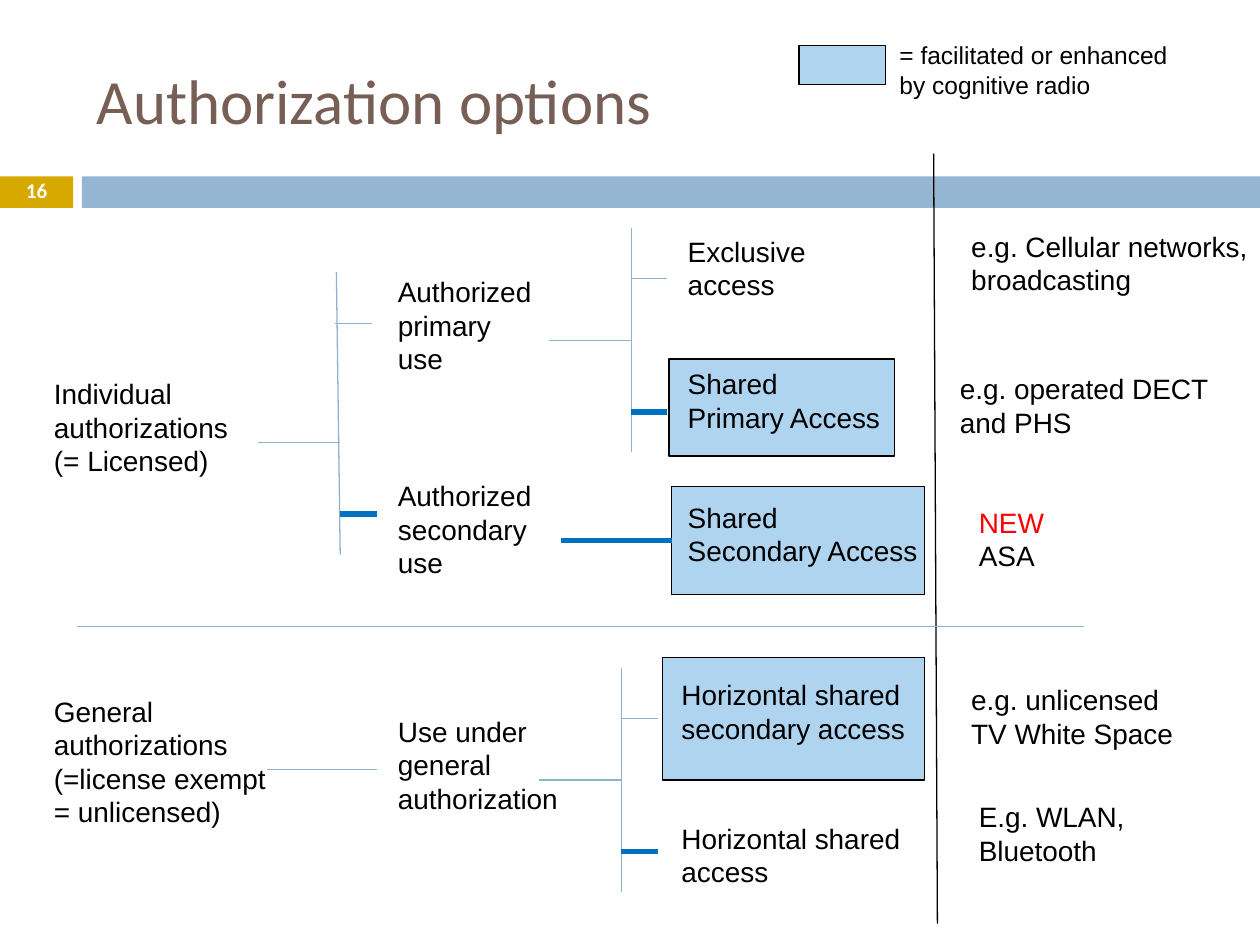
import pptx
import pptx.dml.color
import pptx.enum.shapes
import pptx.enum.text
import pptx.oxml.ns
import pptx.util
from lxml import etree
from pptx.util import Inches

COLORS = {
    "gold": "D7A900", "bar": "94B6D2", "title": "775F55", "white": "FFFFFF",
    "black": "000000", "red": "FF0000", "box": "AFD4F0",
    "thin": "8FB2CF", "strong": "0070C0",
}
ALIGN = pptx.enum.text.PP_ALIGN
ANCHOR = pptx.enum.text.MSO_ANCHOR


def rgb(name):
    return pptx.dml.color.RGBColor.from_string(COLORS[name])


def add_text(position, paragraphs, size=16, font="Arial", color="black",
             bold=False, wrap=False, anchor=ANCHOR.TOP, formats=None):
    """Add a text box; a newline inside a paragraph is a line break."""
    box = slide.shapes.add_textbox(*map(Inches, position))
    frame = box.text_frame
    frame.word_wrap = wrap
    frame.vertical_anchor = anchor
    if not wrap:
        frame.margin_right = 0
    for index, text in enumerate(paragraphs):
        paragraph = frame.add_paragraph() if index else frame.paragraphs[0]
        paragraph.text = text
        for name, value in (formats or {}).items():
            setattr(paragraph, name, value)
        for run in paragraph.runs:
            values = {"name": font, "size": pptx.util.Pt(size), "bold": bold}
            for name, value in values.items():
                setattr(run.font, name, value)
            run.font.color.rgb = rgb(color)
    return box


presentation = pptx.Presentation()
presentation.slide_width = Inches(10)
presentation.slide_height = Inches(7.5)
slide = presentation.slides.add_slide(presentation.slide_layouts[6])

# Header bars and boxes for options that cognitive radio helps
rectangles = {}
for name, position, fill, outlined in [
    ("number bar", (0, 1.4, 0.58, 0.25), "gold", False),
    ("header bar", (0.65, 1.4, 9.35, 0.25), "bar", False),
    ("shared secondary", (5.33, 3.86, 2.01, 0.86), "box", True),
    ("horizontal secondary", (5.26, 5.22, 2.08, 0.97), "box", True),
    ("shared primary", (5.31, 2.85, 1.79, 0.77), "box", True),
    ("legend", (6.34, 0.36, 0.69, 0.31), "box", True),
]:
    shape = slide.shapes.add_shape(
        pptx.enum.shapes.MSO_SHAPE.RECTANGLE, *map(Inches, position))
    shape.shadow.inherit = False
    shape.fill.solid()
    shape.fill.fore_color.rgb = rgb(fill)
    if outlined:
        shape.line.color.rgb = rgb("black")
        shape.line.width = pptx.util.Pt(0.75)
    else:
        shape.line.fill.background()
    rectangles[name] = shape

# Tree lines: start, end, colour, rectangle joined at its left side
for start, end, color, target in [
    ((7.41, 1.22), (7.44, 7.33), "black", None),
    ((8.6, 4.97), (0.61, 4.97), "thin", None),
    ((5.01, 1.81), (5.01, 3.59), "thin", None),
    ((5.01, 2.7), (4.36, 2.7), "thin", None),
    ((5.01, 2.21), (5.29, 2.21), "thin", None),
    ((5.01, 3.27), (5.29, 3.27), "strong", None),
    ((4.45, 4.29), (5.33, 4.29), "strong", "shared secondary"),
    ((4.93, 5.3), (4.93, 7.08), "thin", None),
    ((4.93, 6.19), (4.28, 6.19), "thin", None),
    ((4.93, 5.7), (5.22, 5.7), "thin", None),
    ((4.93, 6.76), (5.22, 6.76), "strong", None),
    ((2.67, 2.16), (2.7, 4.4), "thin", None),
    ((2.7, 3.51), (2.05, 3.51), "thin", None),
    ((2.66, 2.57), (2.95, 2.57), "thin", None),
    ((2.7, 4.08), (2.99, 4.08), "strong", None),
    ((2.12, 6.11), (2.99, 6.11), "thin", None),
]:
    connector = slide.shapes.add_connector(
        pptx.enum.shapes.MSO_CONNECTOR.STRAIGHT, *map(Inches, start + end))
    connector.line.color.rgb = rgb(color)
    connector.line.width = pptx.util.Pt(3 if color == "strong" else 0.75)
    properties = connector.element.find(pptx.oxml.ns.qn("p:spPr"))
    etree.SubElement(properties, pptx.oxml.ns.qn("a:effectLst"))
    if target:
        connector.end_connect(rectangles[target], 1)

# Title, slide number and legend
add_text((0.67, 0.25, 8.92, 1.08), ["Authorization options"], 36, "Calibri",
         "title", wrap=True, anchor=ANCHOR.MIDDLE)
add_text((0, 1.39, 0.58, 0.27), ["16"], 12, "Calibri", "white", bold=True,
         wrap=True, anchor=ANCHOR.MIDDLE,
         formats={"alignment": ALIGN.CENTER, "line_spacing": 0.8})
add_text((7.04, 0.27, 2.34, 0.57),
         ["= facilitated or enhanced\nby cognitive radio"], 14)

# Tree labels and examples
for position, paragraphs in [
    ((0.33, 2.94, 1.58, 1.13),
     ["Individual\nauthorizations", "(= Licensed)"]),
    ((0.33, 5.46, 1.9, 1.45),
     ["General\nauthorizations", "(=license exempt\n= unlicensed)"]),
    ((3.06, 2.13, 1.36, 1.01), ["Authorized\nprimary\nuse"]),
    ((3.06, 3.75, 1.24, 1.04), ["Authorized\nsecondary\nuse"]),
    ((3.06, 5.62, 1.49, 1.04), ["Use under\ngeneral\nauthorization"]),
    ((5.36, 1.81, 1.15, 0.73), ["Exclusive\naccess"]),
    ((5.36, 2.86, 1.7, 0.73), ["Shared\nPrimary Access"]),
    ((5.36, 3.92, 2.02, 0.71), ["Shared\nSecondary Access"]),
    ((5.31, 5.33, 1.95, 0.73), ["Horizontal shared\nsecondary access"]),
    ((5.31, 6.47, 1.95, 0.82), ["Horizontal shared\naccess"]),
    ((7.61, 1.77, 2.39, 0.73), ["e.g. Cellular networks,\nbroadcasting"]),
    ((7.52, 2.9, 2.18, 0.73), ["e.g. operated DECT\nand PHS"]),
    ((7.61, 5.37, 1.8, 0.73), ["e.g. unlicensed", "TV White Space"]),
    ((7.67, 6.3, 1.4, 0.73), ["E.g. WLAN,\nBluetooth"]),
]:
    add_text(position, paragraphs)

new_example = add_text((7.67, 3.96, 0.72, 0.73), ["NEW", "ASA"])
new_example.text_frame.paragraphs[0].runs[0].font.color.rgb = rgb("red")

presentation.save("out.pptx")
